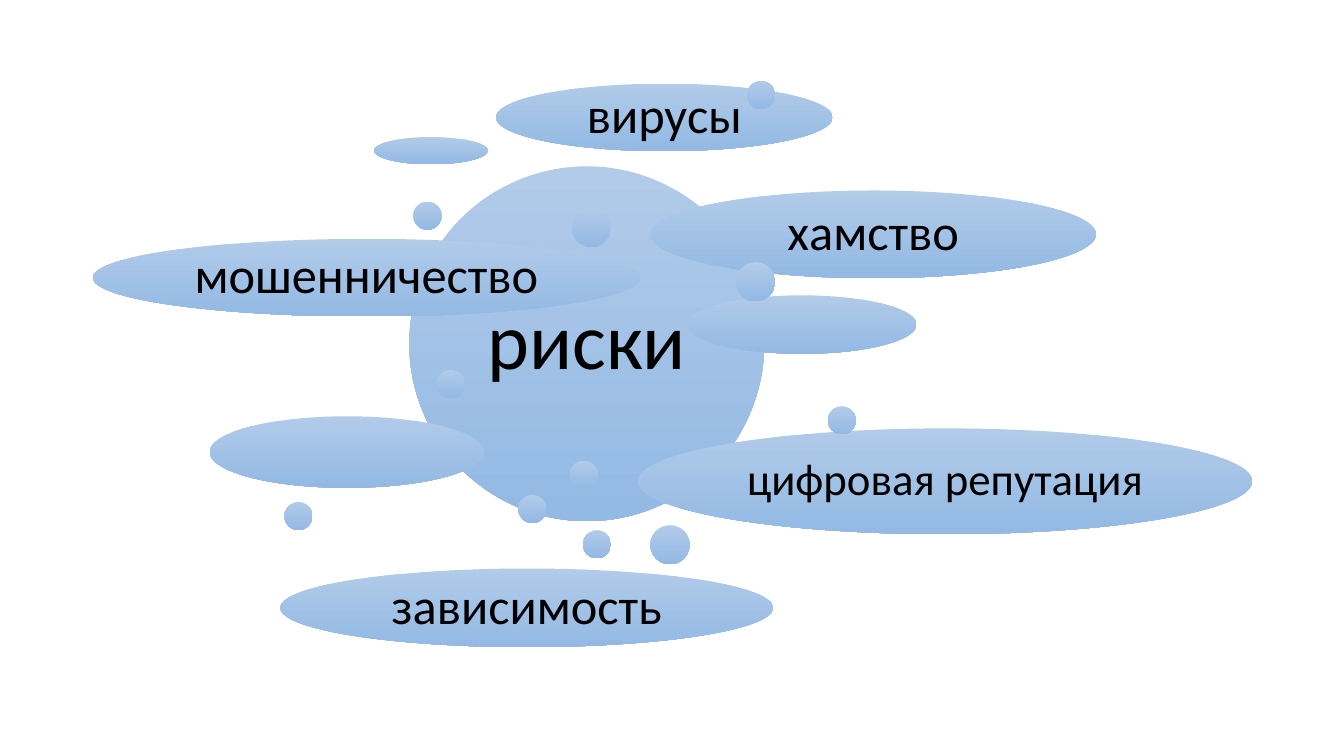
from pptx import Presentation
from pptx.dml.color import RGBColor
from pptx.enum.shapes import MSO_SHAPE
from pptx.enum.text import MSO_ANCHOR, PP_ALIGN
from pptx.util import Inches, Pt

COLORS = {"top": "B1CBE9", "bottom": "93B9E4", "text": "000000"}
DOT, BIG_DOT = (0.28, 0.28), (0.39, 0.39)

# left, top, (width, height), label, text size; from back to front
BUBBLES = [
    (4.06, 1.65, (3.52, 3.52), "риски", 57),
    (5.14, 4.91, DOT, "", 0),
    (6.82, 2.93, (2.27, 0.58), "", 0),
    (6.45, 5.21, BIG_DOT, "", 0),
    (3.71, 1.36, (1.13, 0.27), "", 0),
    (4.33, 3.67, DOT, "", 0),
    (0.92, 2.37, (5.43, 0.77), "мошенничество", 36),
    (5.67, 2.06, BIG_DOT, "", 0),
    (2.08, 4.13, (2.72, 0.71), "", 0),
    (6.45, 1.89, (4.42, 0.87), "хамство", 36),
    (7.3, 2.6, BIG_DOT, "", 0),
    (2.82, 4.98, DOT, "", 0),
    (5.65, 4.57, DOT, "", 0),
    (6.33, 4.25, (6.09, 1.05), "цифровая репутация", 32),
    (8.21, 4.03, DOT, "", 0),
    (2.78, 5.64, (4.89, 0.78), "зависимость", 36),
    (5.78, 5.26, DOT, "", 0),
    (4.92, 0.83, (3.34, 0.67), "вирусы", 36),
    (4.1, 2, DOT, "", 0),
    (7.41, 0.8, DOT, "", 0),
]

prs = Presentation()
prs.slide_width, prs.slide_height = Inches(13.33), Inches(7.5)
slide = prs.slides.add_slide(prs.slide_layouts[6])

for left, top, (width, height), label, size in BUBBLES:
    sp = slide.shapes.add_shape(MSO_SHAPE.OVAL, Inches(left), Inches(top),
                                Inches(width), Inches(height))
    sp.shadow.inherit = False
    sp.line.fill.background()
    sp.fill.gradient()
    sp.fill.gradient_angle = 270
    for stop, name in zip(sp.fill.gradient_stops, ("top", "bottom")):
        stop.color.rgb = RGBColor.from_string(COLORS[name])
    if not label:
        continue
    tf = sp.text_frame
    tf.text = label
    tf.word_wrap = True
    tf.vertical_anchor = MSO_ANCHOR.MIDDLE
    tf.margin_left = tf.margin_right = tf.margin_top = tf.margin_bottom = 0
    p = tf.paragraphs[0]
    p.alignment = PP_ALIGN.CENTER
    p.line_spacing = 0.9
    font = p.runs[0].font
    font.name = "Calibri"
    font.size = Pt(size)
    font.color.rgb = RGBColor.from_string(COLORS["text"])

prs.save("out.pptx")
